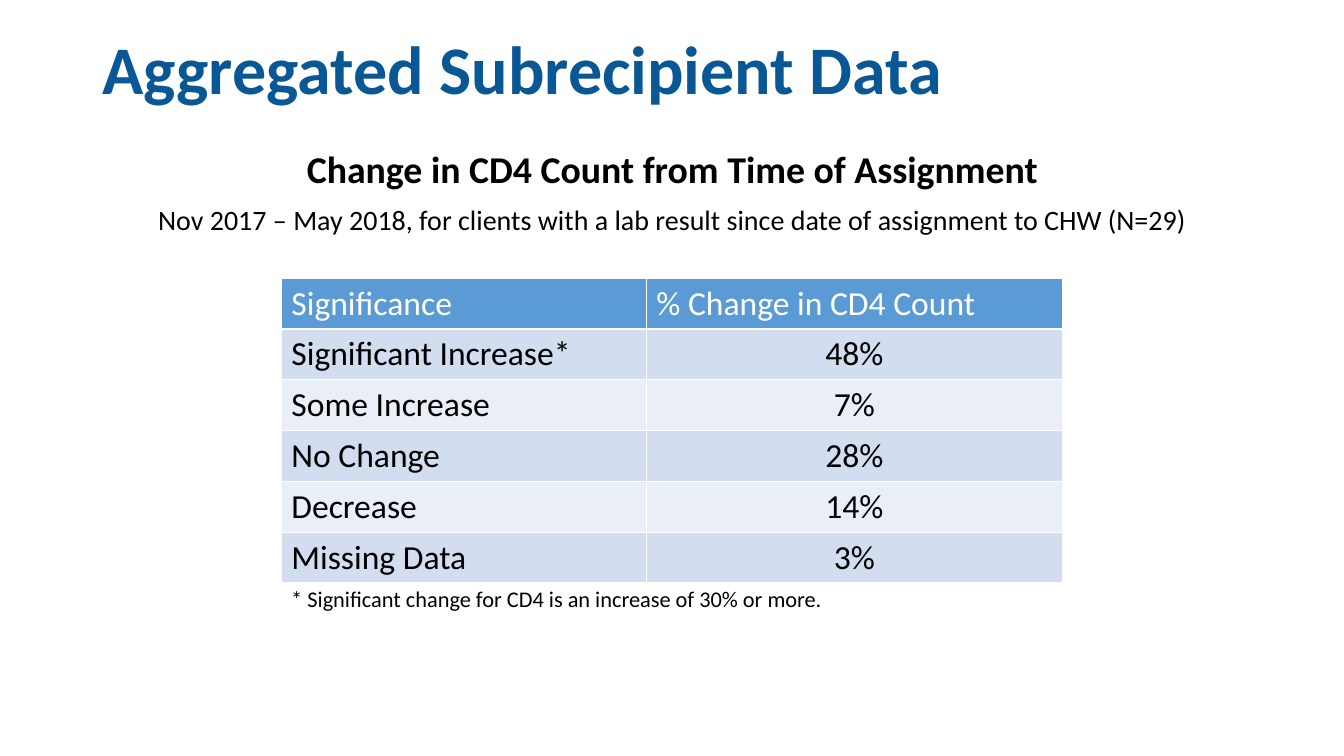
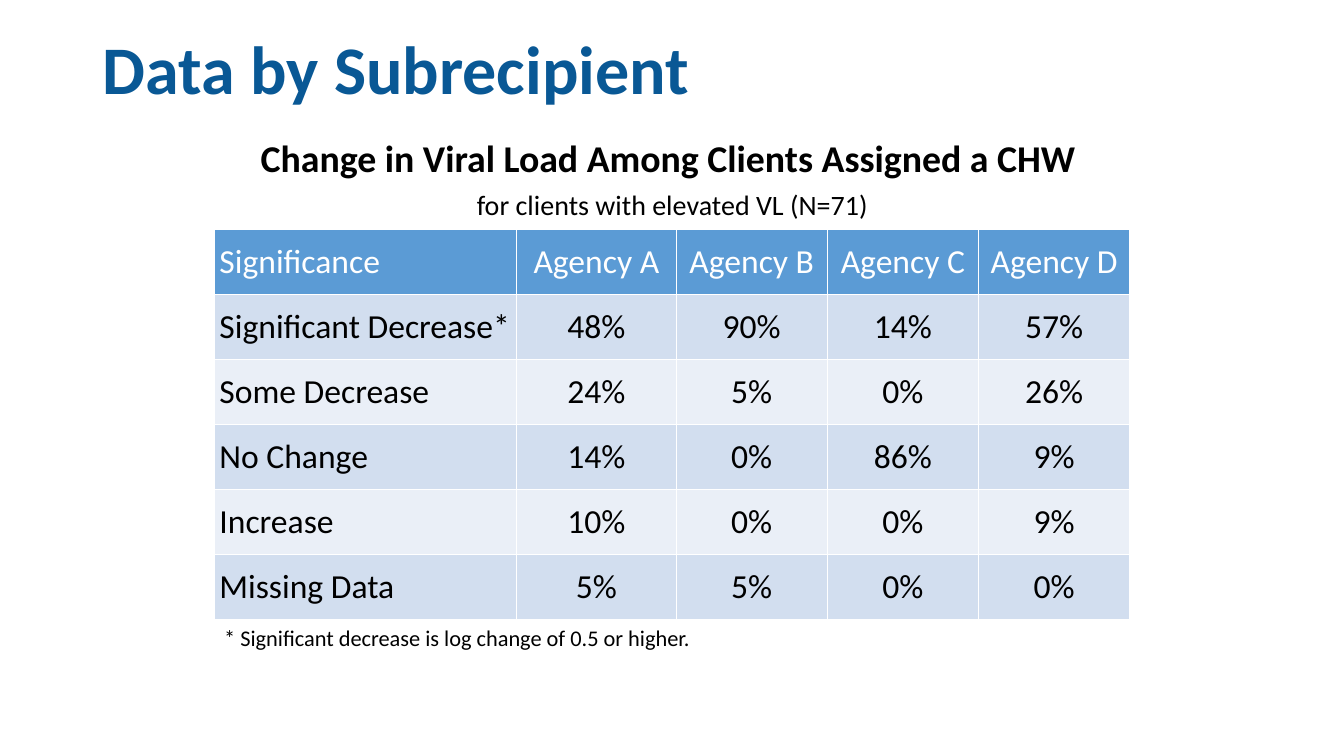
from lxml import etree
from pptx import Presentation
from pptx.dml.color import RGBColor
from pptx.enum.text import MSO_ANCHOR, PP_ALIGN
from pptx.oxml.ns import qn
from pptx.util import Cm, Pt

TITLE_BLUE = RGBColor(0x09, 0x58, 0x95)
HEADER_BLUE = RGBColor(0x5B, 0x9B, 0xD5)
BAND_DARK = RGBColor(0xD2, 0xDE, 0xEF)
BAND_LIGHT = RGBColor(0xEA, 0xEF, 0xF7)
WHITE = RGBColor(0xFF, 0xFF, 0xFF)
BLACK = RGBColor(0x00, 0x00, 0x00)

FONT = "Calibri"
MARGIN = Cm(2.34)
CONTENT_WIDTH = Cm(29.21)

TITLE = {"size": Pt(48.6), "bold": True, "color": TITLE_BLUE}
HEADING = {"size": Pt(27), "bold": True, "color": BLACK}
SUBHEADING = {"size": Pt(20), "bold": False, "color": BLACK}
HEADER_CELL = {"size": Pt(24), "bold": False, "color": WHITE}
BODY_CELL = {"size": Pt(24), "bold": False, "color": BLACK}
FOOTNOTE = {"size": Pt(16), "bold": False, "color": BLACK}


def write(para, text, style, **layout):
    """Put text into a paragraph with a font style and paragraph settings."""
    span = para.add_run()
    span.text = text
    span.font.name = FONT
    for name, value in style.items():
        if name == "color":
            span.font.color.rgb = value
        else:
            setattr(span.font, name, value)
    for name, value in layout.items():
        setattr(para, name, value)


def add_box(page, left, top, width, height):
    frame = page.shapes.add_textbox(left, top, width, height).text_frame
    frame.word_wrap = True
    return frame


def add_title(page, text):
    frame = add_box(page, MARGIN, Cm(0.66), CONTENT_WIDTH, Cm(2.31))
    frame.vertical_anchor = MSO_ANCHOR.MIDDLE
    write(frame.paragraphs[0], text, TITLE, line_spacing=0.9)


def add_headings(page, top, heading, subheading, line_spacing):
    frame = add_box(page, MARGIN, top, CONTENT_WIDTH, Cm(2.57))
    layout = {"alignment": PP_ALIGN.CENTER, "line_spacing": line_spacing,
              "space_after": Pt(3)}
    write(frame.paragraphs[0], heading, HEADING, **layout)
    write(frame.add_paragraph(), subheading, SUBHEADING,
          space_before=Pt(10), **layout)


def add_footnote(page, left, top, text):
    frame = add_box(page, left, top, Cm(15.54), Cm(0.94))
    write(frame.paragraphs[0], text, FOOTNOTE)


def add_borders(cell):
    """Draw thin white lines on all four sides of a cell."""
    properties = cell._tc.get_or_add_tcPr()
    for index, side in enumerate(("a:lnL", "a:lnR", "a:lnT", "a:lnB")):
        line = etree.Element(qn(side), w=str(Pt(1)))
        fill = etree.SubElement(line, qn("a:solidFill"))
        etree.SubElement(fill, qn("a:srgbClr"), val=str(WHITE))
        properties.insert(index, line)


def add_data_table(page, left, top, widths, row_height, rows,
                   centred_header=False, cell_format=None):
    table = page.shapes.add_table(len(rows), len(widths), left, top,
                                  sum(widths), row_height * len(rows)).table
    for column, width in zip(table.columns, widths):
        column.width = width
    for row_index, values in enumerate(rows):
        table.rows[row_index].height = row_height
        is_header = row_index == 0
        band = BAND_DARK if row_index % 2 else BAND_LIGHT
        for column_index, value in enumerate(values):
            cell = table.cell(row_index, column_index)
            cell.fill.solid()
            cell.fill.fore_color.rgb = HEADER_BLUE if is_header else band
            add_borders(cell)
            for name, setting in (cell_format or {}).items():
                setattr(cell, name, setting)
            centred = column_index > 0 and (centred_header or not is_header)
            write(cell.text_frame.paragraphs[0], value,
                  HEADER_CELL if is_header else BODY_CELL,
                  alignment=PP_ALIGN.CENTER if centred else PP_ALIGN.LEFT)


def add_cd4_slide(deck):
    page = deck.slides.add_slide(deck.slide_layouts[6])
    add_title(page, "Aggregated Subrecipient Data")
    add_headings(
        page, Cm(3.78), "Change in CD4 Count from Time of Assignment",
        "Nov 2017 – May 2018, for clients with a lab result since date of "
        "assignment to CHW (N=29)", 0.8)
    left = Cm(7.09)
    add_data_table(page, left, Cm(7.01), [Cm(9.2), Cm(10.48)], Cm(1.28), [
        ("Significance", "% Change in CD4 Count"),
        ("Significant Increase*", "48%"),
        ("Some Increase", "7%"),
        ("No Change", "28%"),
        ("Decrease", "14%"),
        ("Missing Data", "3%"),
    ])
    add_footnote(page, left, Cm(14.63),
                 "* Significant change for CD4 is an increase of 30% or more.")


def add_viral_load_slide(deck):
    page = deck.slides.add_slide(deck.slide_layouts[6])
    add_title(page, "Data by Subrecipient")
    add_headings(page, Cm(3.58),
                 "Change in Viral Load Among Clients Assigned a CHW ",
                 "for clients with elevated VL (N=71)", 0.7)
    left = Cm(5.4)
    inset = Cm(0.13)
    cell_format = {"vertical_anchor": MSO_ANCHOR.MIDDLE,
                   "margin_left": inset, "margin_right": inset,
                   "margin_top": inset, "margin_bottom": inset}
    widths = [Cm(7.62), Cm(4.02)] + [Cm(3.81)] * 3
    add_data_table(page, left, Cm(5.78), widths, Cm(1.64), [
        ("Significance", "Agency A", "Agency B", "Agency C", "Agency D"),
        ("Significant Decrease*", "48%", "90%", "14%", "57%"),
        ("Some Decrease", "24%", "5%", "0%", "26%"),
        ("No Change", "14%", "0%", "86%", "9%"),
        ("Increase", "10%", "0%", "0%", "9%"),
        ("Missing Data", "5%", "5%", "0%", "0%"),
    ], centred_header=True, cell_format=cell_format)
    add_footnote(page, left, Cm(15.6),
                 "* Significant decrease is log change of 0.5 or higher.")


def main():
    deck = Presentation()
    deck.slide_width = Cm(33.87)
    deck.slide_height = Cm(19.05)
    add_cd4_slide(deck)
    add_viral_load_slide(deck)
    deck.save("out.pptx")


if __name__ == "__main__":
    main()
